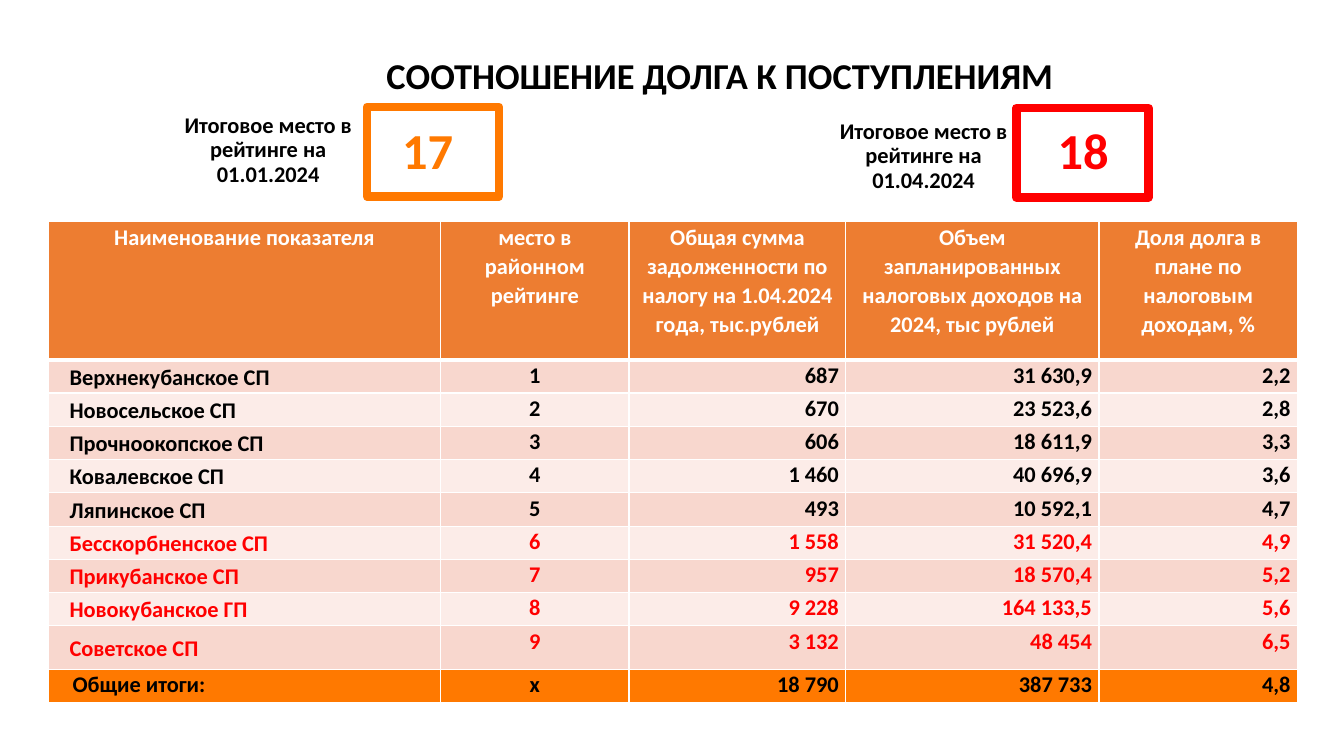
from typing import NamedTuple

from lxml.etree import SubElement
from pptx import Presentation
from pptx.dml.color import RGBColor
from pptx.enum.shapes import MSO_SHAPE
from pptx.enum.text import MSO_ANCHOR, MSO_AUTO_SIZE, PP_ALIGN
from pptx.oxml.ns import qn
from pptx.util import Inches, Pt

COLORS = {
    "black": "000000", "white": "FFFFFF", "red": "FF0000", "orange": "FF7900",
    "head": "ED7D31", "dark": "F8D7CE", "light": "FCECE8",
}
FONT = "Calibri"
LEFT, MID, RIGHT = PP_ALIGN.LEFT, PP_ALIGN.CENTER, PP_ALIGN.RIGHT


class Box(NamedTuple):
    left: float
    top: float
    width: float
    height: float

    def place(self) -> tuple:
        return tuple(Inches(size) for size in self)


class Rank(NamedTuple):
    date: str
    place: str
    color: str
    label: Box
    digits: Box
    frame: Box


RANKS = [
    Rank("01.01.2024", "17", "orange", Box(1.47, 1.07, 2.38, 0.85),
         Box(3.89, 1.13, 0.79, 0.71), Box(3.64, 1.06, 1.31, 0.89)),
    Rank("01.04.2024", "18", "red", Box(8.05, 1.13, 2.22, 0.85),
         Box(10.39, 1.13, 0.88, 0.71), Box(10.08, 1.07, 1.31, 0.89)),
]

TITLE = Box(1.31, 0.35, 11.67, 0.85)
TABLE = Box(0.48, 2.2, 12.39, 4.77)
WIDTHS = [3.89, 1.87, 2.15, 2.51, 1.97]
HEIGHTS = [1.37] + [0.33] * 8 + [0.43, 0.33]
ALIGNS = [LEFT, MID, RIGHT, RIGHT, RIGHT]
RED_FROM = 6
ROWS = [
    ("Наименование показателя", "место в районном рейтинге",
     "Общая сумма задолженности по налогу на 1.04.2024 года, тыс.рублей",
     "Объем запланированных налоговых доходов на 2024, тыс рублей",
     "Доля долга в плане по налоговым доходам, %"),
    ("Верхнекубанское СП", "1", "687", "31 630,9", "2,2"),
    ("Новосельское СП", "2", "670", "23 523,6", "2,8"),
    ("Прочноокопское СП", "3", "606", "18 611,9", "3,3"),
    ("Ковалевское СП", "4", "1 460", "40 696,9", "3,6"),
    ("Ляпинское СП", "5", "493", "10 592,1", "4,7"),
    ("Бесскорбненское СП", "6", "1 558", "31 520,4", "4,9"),
    ("Прикубанское СП", "7", "957", "18 570,4", "5,2"),
    ("Новокубанское ГП", "8", "9 228", "164 133,5", "5,6"),
    ("Советское СП", "9", "3 132", "48 454", "6,5"),
    ("Общие итоги:", "х", "18 790", "387 733", "4,8"),
]
LAST = len(ROWS) - 1


def rgb(name: str) -> RGBColor:
    return RGBColor.from_string(COLORS[name])


def write(frame, text: str, *, size: float = 16, color: str = "black",
          align=MID, spacing: float = 1.0, indent: float = 0) -> None:
    frame.word_wrap = True
    para = frame.paragraphs[0]
    para.alignment = align
    para.line_spacing = spacing
    if indent:
        para._p.get_or_add_pPr().set("indent", str(Inches(indent)))
    run = para.add_run()
    run.text = text
    font = run.font
    font.name, font.size, font.bold = FONT, Pt(size), True
    font.color.rgb = rgb(color)


def add_edges(cell, row: int) -> None:
    """Give the cell white borders, thicker below the header row."""
    props = cell._tc.get_or_add_tcPr()
    for side in "LRTB":
        thick = (row, side) in {(0, "B"), (1, "T")}
        line = SubElement(props, qn(f"a:ln{side}"), w=str(Pt(3 if thick else 1)))
        fill = SubElement(line, qn("a:solidFill"))
        SubElement(fill, qn("a:srgbClr"), val=COLORS["white"])


def row_look(row: int) -> tuple[str, str]:
    """Return the fill and text colours of a table row."""
    if row == 0:
        return "head", "white"
    if row == LAST:
        return "orange", "black"
    return "dark" if row % 2 else "light", "red" if row >= RED_FROM else "black"


def add_grid(slide) -> None:
    table = slide.shapes.add_table(len(ROWS), len(WIDTHS), *TABLE.place()).table
    for column, width in zip(table.columns, WIDTHS):
        column.width = Inches(width)
    for row, (texts, height) in enumerate(zip(ROWS, HEIGHTS)):
        table.rows[row].height = Inches(height)
        fill, color = row_look(row)
        for col, text in enumerate(texts):
            cell = table.cell(row, col)
            add_edges(cell, row)
            cell.fill.solid()
            cell.fill.fore_color.rgb = rgb(fill)
            cell.margin_left = cell.margin_right = Inches(0.07)
            cell.margin_top = cell.margin_bottom = 0
            indent = 0
            if col == 0 and row > 0:
                indent = 0.17 if row == LAST else 0.14
                if row < LAST:
                    cell.vertical_anchor = MSO_ANCHOR.MIDDLE
            write(cell.text_frame, text, color=color, spacing=1.07, indent=indent,
                  align=ALIGNS[col] if row else MID)


def add_rank(slide, rank: Rank) -> None:
    label = slide.shapes.add_textbox(*rank.label.place()).text_frame
    label.vertical_anchor = MSO_ANCHOR.MIDDLE
    write(label, f"Итоговое место в рейтинге на {rank.date}", spacing=0.9)
    digits = slide.shapes.add_textbox(*rank.digits.place()).text_frame
    digits.auto_size = MSO_AUTO_SIZE.SHAPE_TO_FIT_TEXT
    write(digits, rank.place, size=36, color=rank.color, align=LEFT)
    frame = slide.shapes.add_shape(MSO_SHAPE.RECTANGLE, *rank.frame.place())
    frame.shadow.inherit = False
    frame.fill.background()
    frame.line.color.rgb = rgb(rank.color)
    frame.line.width = Pt(6)


def add_title(slide) -> None:
    title = slide.shapes.title
    title.left, title.top, title.width, title.height = TITLE.place()
    title.text_frame.auto_size = MSO_AUTO_SIZE.NONE
    title.text_frame.vertical_anchor = MSO_ANCHOR.MIDDLE
    write(title.text_frame, "СООТНОШЕНИЕ ДОЛГА К ПОСТУПЛЕНИЯМ", size=26, spacing=0.9)


def main() -> None:
    deck = Presentation()
    deck.slide_width, deck.slide_height = Inches(13.33), Inches(7.5)
    slide = deck.slides.add_slide(deck.slide_layouts.get_by_name("Title Only"))
    add_title(slide)
    add_grid(slide)
    for rank in RANKS:
        add_rank(slide, rank)
    deck.save("out.pptx")


if __name__ == "__main__":
    main()
